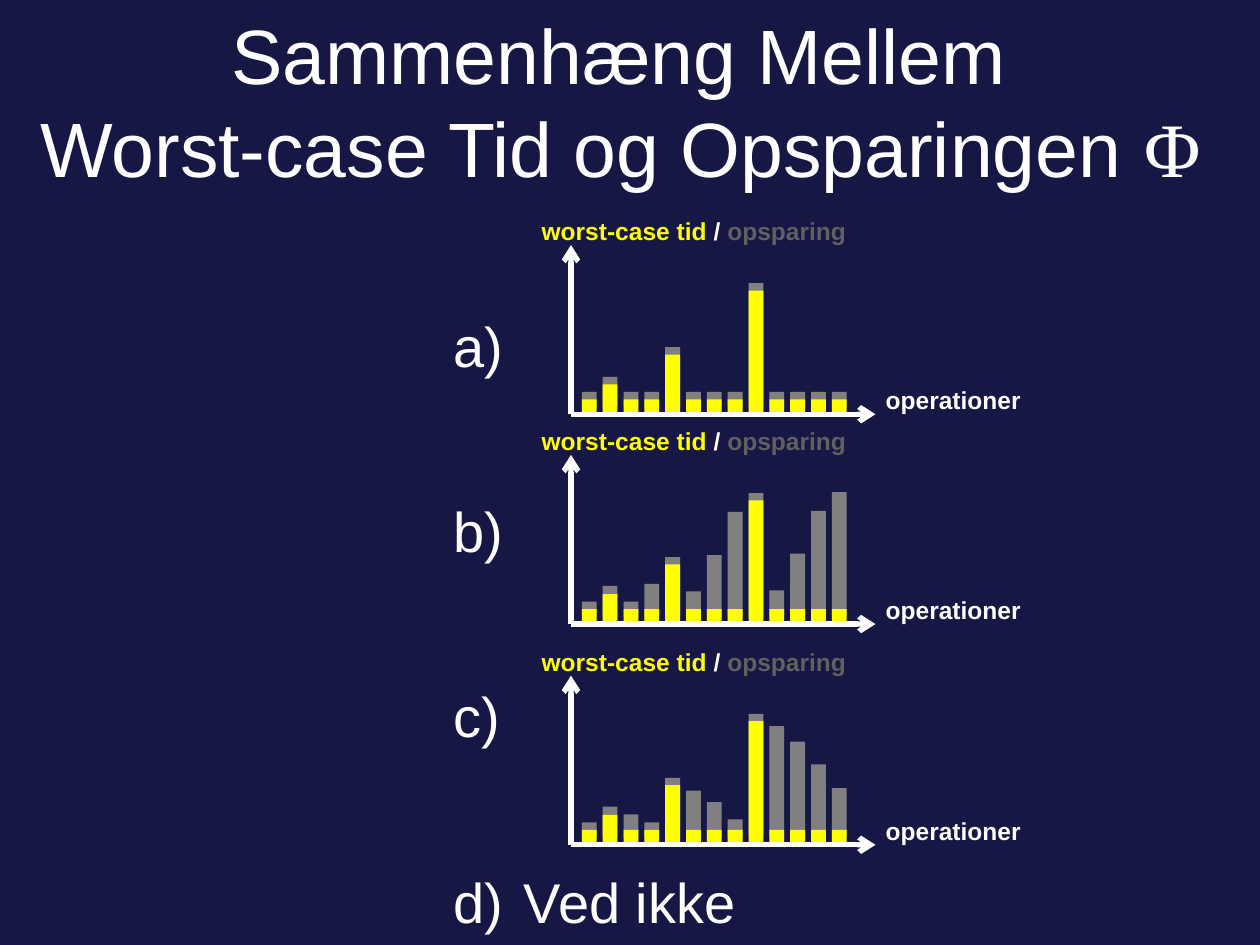
"""Build a slide on worst-case time and savings over a run of operations."""
from lxml import etree
from pptx import Presentation
from pptx.dml.color import RGBColor
from pptx.enum.shapes import MSO_CONNECTOR, MSO_SHAPE
from pptx.enum.text import MSO_ANCHOR, PP_ALIGN
from pptx.oxml.ns import qn
from pptx.util import Cm, Pt

RECT = MSO_SHAPE.RECTANGLE
LINE = MSO_CONNECTOR.STRAIGHT
TOP, MIDDLE = MSO_ANCHOR.TOP, MSO_ANCHOR.MIDDLE
CENTER, RIGHT = PP_ALIGN.CENTER, PP_ALIGN.RIGHT

NAVY = RGBColor(0x17, 0x17, 0x45)
WHITE = RGBColor(0xFF, 0xFF, 0xFF)
YELLOW = RGBColor(0xFF, 0xFF, 0x00)
GREY = RGBColor(0x80, 0x80, 0x80)
DIM = RGBColor(0x60, 0x60, 0x60)

AXIS_X, AXIS_END, AXIS_RISE = 11.51, 17.65, 3.41
BAR_X, BAR_STEP, BAR_WIDTH = 11.73, 0.42, 0.3
LIFT = 0.15

COST = [0.3, 0.6, 0.3, 0.3, 1.2, 0.3, 0.3, 0.3, 2.49, 0.3, 0.3, 0.3, 0.3]
SAVED_B = [0.3, 0.62, 0.3, 0.66, 1.2, 0.51, 1.24, 2.11, 2.49, 0.53, 1.27, 2.13, 2.51]
SAVED_C = [0.3, 0.62, 0.46, 0.3, 1.2, 0.94, 0.71, 0.36, 2.49, 2.24, 1.93, 1.47, 0.99]
PLOTS = [(8.35, COST), (12.58, SAVED_B), (17.03, SAVED_C)]


def write(para, text, size=14, color=WHITE, bold=False, font="Arial"):
    """Add a formatted run to a paragraph."""
    run = para.add_run()
    run.text = text
    run.font.size = Pt(size)
    run.font.bold = bold
    run.font.name = font
    run.font.color.rgb = color


def add_box(slide, left, top, width, height, anchor=TOP):
    """Add a wrapping text box and return its frame."""
    frame = slide.shapes.add_textbox(Cm(left), Cm(top), Cm(width), Cm(height)).text_frame
    frame.word_wrap = True
    frame.vertical_anchor = anchor
    return frame


def add_title(slide):
    """Add the two-line title."""
    para = add_box(slide, 0, 0.43, 25.4, 3.18, MIDDLE).paragraphs[0]
    para.alignment = CENTER
    write(para, "Sammenhæng Mellem ", size=44)
    para.add_line_break()
    write(para, "Worst-case Tid og Opsparingen ", size=44)
    write(para, "Φ ", size=44, font="Times New Roman")


def add_bars(slide, floor, heights, color):
    """Add a row of evenly spaced bars standing on the floor."""
    for index, height in enumerate(heights):
        left = BAR_X + index * BAR_STEP
        bar = slide.shapes.add_shape(
            RECT, Cm(left), Cm(floor - height), Cm(BAR_WIDTH), Cm(height))
        bar.shadow.inherit = False
        bar.fill.solid()
        bar.fill.fore_color.rgb = color
        bar.line.fill.background()


def add_arrow(slide, x, y, end_x, end_y):
    """Add a white axis with an arrowhead at its end."""
    axis = slide.shapes.add_connector(LINE, Cm(x), Cm(y), Cm(end_x), Cm(end_y))
    axis.line.color.rgb = WHITE
    axis.line.width = Pt(3)
    etree.SubElement(axis.line._get_or_add_ln(), qn("a:tailEnd"), type="arrow")
    etree.SubElement(axis._element.spPr, qn("a:effectLst"))


def add_labels(slide, base):
    """Add the legend above a plot and the name of its flat axis."""
    frame = add_box(slide, 10.67, base - 4.11, 10.16, 4.45)
    legend = frame.paragraphs[0]
    write(legend, "worst-case tid ", color=YELLOW, bold=True)
    write(legend, "/ ", bold=True)
    write(legend, "opsparing", color=DIM, bold=True)
    name = frame.add_paragraph()
    name.alignment = RIGHT
    name.space_before = Pt(79.5)
    write(name, "operationer", bold=True)


def add_plot(slide, base, saved):
    """Add one plot of cost in front of savings."""
    add_bars(slide, base - LIFT, saved, GREY)
    add_labels(slide, base)
    add_arrow(slide, AXIS_X, base, AXIS_X, base - AXIS_RISE)
    add_bars(slide, base, COST, YELLOW)
    add_arrow(slide, AXIS_X, base, AXIS_END, base)


def add_choices(slide):
    """Add the lettered answers."""
    frame = add_box(slide, 8.89, 6.15, 6.99, 9.09)
    for index, text in enumerate([" ", " ", " ", "Ved ikke"]):
        para = frame.add_paragraph() if index else frame.paragraphs[0]
        para.space_before, para.space_after = Pt(7.5), Pt(60)
        write(para, text, size=32)
        props = para._p.get_or_add_pPr()
        props.set("marL", str(Cm(1.42)))
        props.set("indent", str(Cm(-1.42)))
        etree.SubElement(props, qn("a:buFont"), typeface="Arial")
        etree.SubElement(props, qn("a:buAutoNum"), type="alphaLcParenR")


def main():
    """Build and save the slide."""
    deck = Presentation()
    deck.slide_width, deck.slide_height = Cm(25.4), Cm(19.05)
    slide = deck.slides.add_slide(deck.slide_layouts[6])
    slide.background.fill.solid()
    slide.background.fill.fore_color.rgb = NAVY
    add_title(slide)
    for base, saved in PLOTS:
        add_plot(slide, base, saved)
    add_choices(slide)
    deck.save("out.pptx")


if __name__ == "__main__":
    main()
